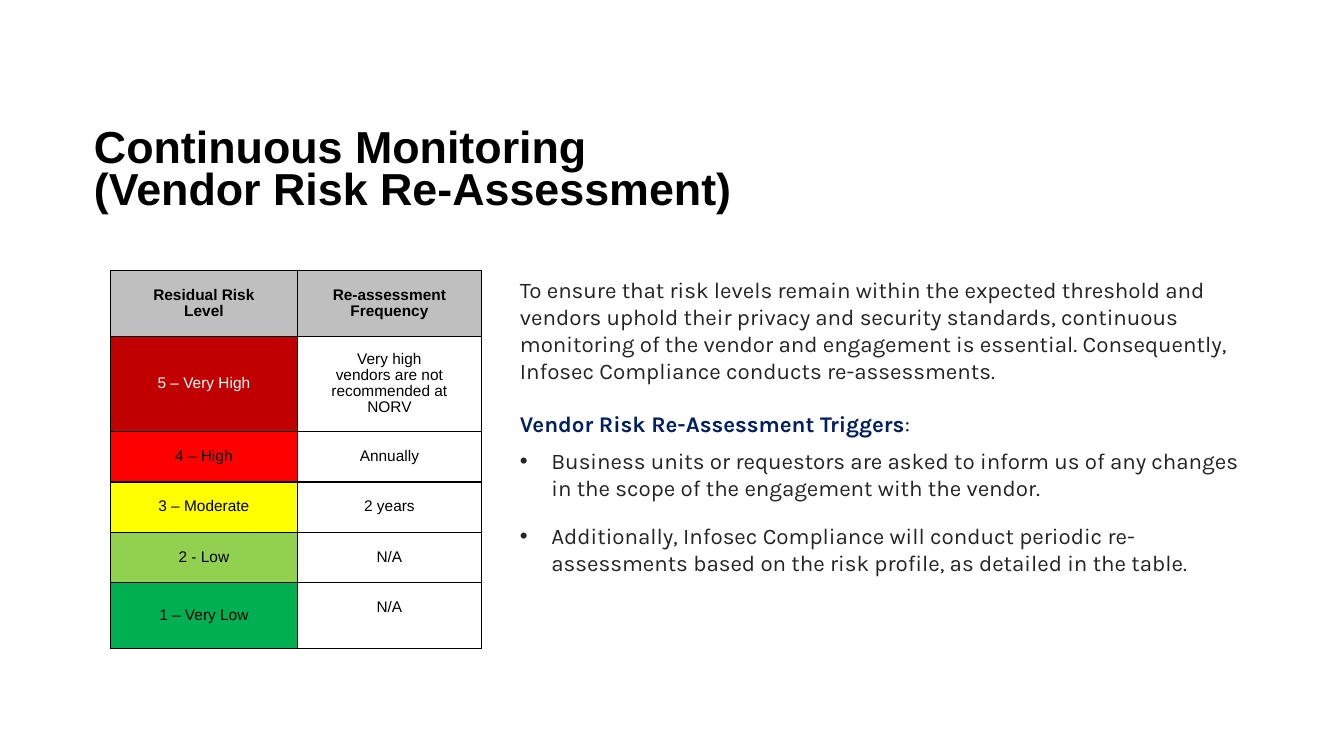
from pptx import Presentation
from pptx.dml.color import RGBColor
from pptx.enum.text import MSO_ANCHOR, PP_ALIGN
from pptx.oxml import parse_xml
from pptx.oxml.ns import nsdecls
from pptx.util import Pt

BLACK = RGBColor(0x00, 0x00, 0x00)
WHITE = RGBColor(0xFF, 0xFF, 0xFF)
CHARCOAL = RGBColor(0x24, 0x24, 0x24)
NAVY = RGBColor(0x00, 0x20, 0x60)
GREY = RGBColor(0xBF, 0xBF, 0xBF)
DARK_RED = RGBColor(0xC0, 0x00, 0x00)
RED = RGBColor(0xFF, 0x00, 0x00)
YELLOW = RGBColor(0xFF, 0xFF, 0x00)
LIGHT_GREEN = RGBColor(0x92, 0xD0, 0x50)
GREEN = RGBColor(0x00, 0xB0, 0x50)


def format_font(run, name, size, color, bold=False):
    run.font.name = name
    run.font.size = Pt(size)
    run.font.color.rgb = color
    run.font.bold = bold


def add_text_box(left, top, width, height):
    """Add a wrapping text box and return its text frame."""
    text_frame = slide.shapes.add_textbox(Pt(left), Pt(top), Pt(width), Pt(height)).text_frame
    text_frame.word_wrap = True
    return text_frame


presentation = Presentation()
presentation.slide_width = Pt(960)
presentation.slide_height = Pt(540)
slide = presentation.slides.add_slide(presentation.slide_layouts[6])

# Title
title = add_text_box(60, 89.5, 713.5, 83)
title.text = "Continuous Monitoring\v(Vendor Risk Re-Assessment)"
title.paragraphs[0].line_spacing = Pt(30)
for run in title.paragraphs[0].runs:
    format_font(run, "Arial", 32, BLACK, bold=True)

# Explanation and triggers
body = add_text_box(364.3, 193.7, 532, 248.4)
introduction = body.paragraphs[0]
introduction.text = (
    "To ensure that risk levels remain within the expected threshold and vendors uphold "
    "their privacy and security standards, continuous monitoring of the vendor and "
    "engagement is essential. Consequently, Infosec Compliance conducts re-assessments."
)
format_font(introduction.runs[0], "Karla", 16, CHARCOAL)

heading = body.add_paragraph()
heading.space_before = Pt(19)
for text, bold in (("Vendor Risk Re-Assessment Triggers", True), (":", False)):
    run = heading.add_run()
    run.text = text
    format_font(run, "Karla", 16, NAVY, bold)

triggers = (
    "Business units or requestors are asked to inform us of any changes in the scope "
    "of the engagement with the vendor.",
    "Additionally, Infosec Compliance will conduct periodic re-assessments based on "
    "the risk profile, as detailed in the table.",
)
for trigger in triggers:
    paragraph = body.add_paragraph()
    paragraph.text = trigger
    paragraph.space_before = paragraph.space_after = Pt(7.5)
    format_font(paragraph.runs[0], "Karla", 16, CHARCOAL)
    properties = paragraph._p.get_or_add_pPr()
    properties.set("marL", str(Pt(22.5)))
    properties.set("indent", str(-Pt(22.5)))
    properties.append(parse_xml(f'<a:buFont {nsdecls("a")} typeface="Arial"/>'))
    properties.append(parse_xml(f'<a:buChar {nsdecls("a")} char="•"/>'))

# Risk table: level, frequency, level fill, level text colour, row height
risk_rows = (
    ("Residual Risk Level", "Re-assessment\nFrequency", GREY, BLACK, 47),
    ("5 – Very High", "Very high vendors are not recommended at NORV", DARK_RED, WHITE, 68),
    ("4 – High", "Annually", RED, BLACK, 36),
    ("3 – Moderate", "2 years", YELLOW, BLACK, 36),
    ("2 - Low", "N/A", LIGHT_GREEN, BLACK, 36),
    ("1 – Very Low", "N/A", GREEN, BLACK, 47),
)
column_widths = (134, 131)
table = slide.shapes.add_table(
    len(risk_rows), 2, Pt(78.7), Pt(193.3),
    Pt(sum(column_widths)), Pt(sum(row[-1] for row in risk_rows)),
).table
for column, width in zip(table.columns, column_widths):
    column.width = Pt(width)

for row_index, (level, frequency, fill, level_color, height) in enumerate(risk_rows):
    table.rows[row_index].height = Pt(height)
    is_header = row_index == 0
    frequency_fill = fill if is_header else WHITE
    cells = ((level, fill, level_color), (frequency, frequency_fill, BLACK))
    for column_index, (text, cell_fill, color) in enumerate(cells):
        cell = table.cell(row_index, column_index)
        cell.vertical_anchor = MSO_ANCHOR.MIDDLE
        cell.margin_left = cell.margin_right = Pt(22.5)
        cell.margin_top = cell.margin_bottom = Pt(11)
        cell.text_frame.text = text
        for paragraph in cell.text_frame.paragraphs:
            paragraph.alignment = PP_ALIGN.CENTER
            paragraph.line_spacing = Pt(11.3)
            format_font(paragraph.runs[0], "Arial", 11, color, bold=is_header)
        cell_properties = cell._tc.get_or_add_tcPr()
        for side in ("lnL", "lnR", "lnT", "lnB"):
            cell_properties.append(parse_xml(
                f'<a:{side} {nsdecls("a")} w="{Pt(1)}"><a:solidFill>'
                f'<a:srgbClr val="{BLACK}"/></a:solidFill></a:{side}>'
            ))
        cell.fill.solid()
        cell.fill.fore_color.rgb = cell_fill

# The last frequency sits slightly above the middle of its row
table.cell(len(risk_rows) - 1, 1).margin_bottom = Pt(22.3)

presentation.save("out.pptx")
